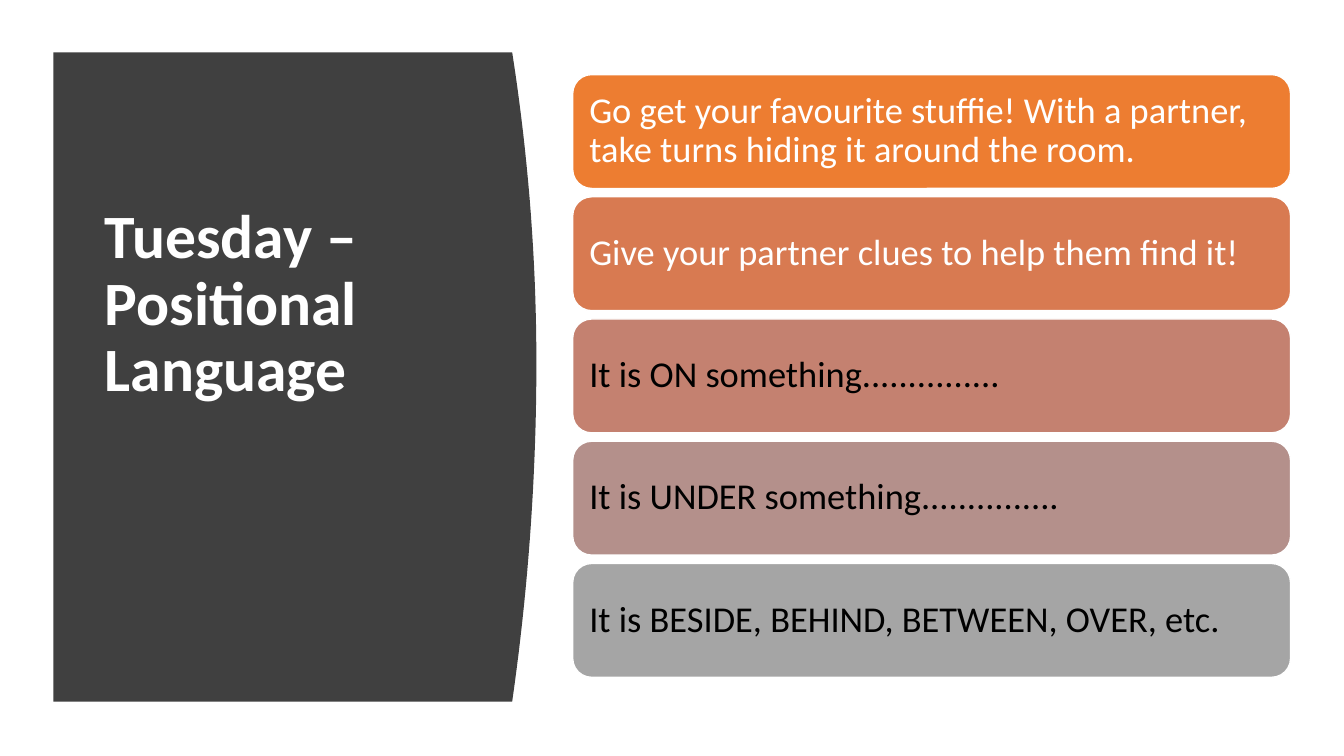
import pptx
import pptx.util
import pptx.dml.color
import pptx.enum.shapes
import pptx.enum.text

Inches = pptx.util.Inches
RGBColor = pptx.dml.color.RGBColor

WHITE = RGBColor(0xFF, 0xFF, 0xFF)
BLACK = RGBColor(0x00, 0x00, 0x00)
CHARCOAL = RGBColor(0x40, 0x40, 0x40)
ORANGE = RGBColor(0xED, 0x7D, 0x31)
TERRACOTTA = RGBColor(0xD8, 0x7A, 0x51)
ROSE = RGBColor(0xC4, 0x81, 0x70)
MAUVE = RGBColor(0xB4, 0x90, 0x8B)
GRAY = RGBColor(0xA5, 0xA5, 0xA5)

CARDS = [
    ("Go get your favourite stuffie! With a partner, take turns hiding it around the room.",
     ORANGE, WHITE),
    ("Give your partner clues to help them find it!", TERRACOTTA, WHITE),
    ("It is ON something...............", ROSE, BLACK),
    ("It is UNDER something...............", MAUVE, BLACK),
    ("It is BESIDE, BEHIND, BETWEEN, OVER, etc.", GRAY, BLACK),
]


class SlideBuilder:
    """Holds the text style and the slide being built."""

    font_name = "Calibri"
    title_size = 44
    card_size = 26
    line_spacing = 0.9

    def __init__(self, slide):
        self.slide = slide

    def set_text(self, shape, text, size, color, bold=False):
        frame = shape.text_frame
        frame.text = text
        frame.word_wrap = True
        frame.auto_size = pptx.enum.text.MSO_AUTO_SIZE.NONE
        frame.vertical_anchor = pptx.enum.text.MSO_ANCHOR.MIDDLE
        paragraph = frame.paragraphs[0]
        paragraph.alignment = pptx.enum.text.PP_ALIGN.LEFT
        paragraph.line_spacing = self.line_spacing
        font = paragraph.runs[0].font
        font.name = self.font_name
        font.size = pptx.util.Pt(size)
        font.bold = bold
        font.color.rgb = color

    def title(self, text, left, top, width, height):
        title = self.slide.shapes.title
        title.left, title.top = Inches(left), Inches(top)
        title.width, title.height = Inches(width), Inches(height)
        self.set_text(title, text, self.title_size, WHITE, bold=True)

    def curved_panel(self, left, top, bottom, corner, bulge, widest_at, steps=40):
        """Draws a panel whose right edge is an arc, placed behind the title."""
        edge = []
        for step in range(steps + 1):
            y = top + (bottom - top) * step / steps
            reach = widest_at - top if y < widest_at else bottom - widest_at
            x = corner + bulge * (1 - ((y - widest_at) / reach) ** 2)
            edge.append((Inches(x), Inches(y)))
        builder = self.slide.shapes.build_freeform(Inches(left), Inches(top))
        builder.add_line_segments(edge + [(Inches(left), Inches(bottom))], close=True)
        panel = builder.convert_to_shape()
        panel.shadow.inherit = False
        panel.fill.solid()
        panel.fill.fore_color.rgb = CHARCOAL
        panel.line.fill.background()
        self.slide.shapes.title.element.addprevious(panel.element)

    def card(self, text, fill, color, left, top, width, height):
        card = self.slide.shapes.add_shape(
            pptx.enum.shapes.MSO_SHAPE.ROUNDED_RECTANGLE,
            Inches(left), Inches(top), Inches(width), Inches(height))
        card.shadow.inherit = False
        card.fill.solid()
        card.fill.fore_color.rgb = fill
        card.line.color.rgb = WHITE
        card.line.width = pptx.util.Pt(1)
        frame = card.text_frame
        frame.margin_left = frame.margin_right = Inches(0.11)
        frame.margin_top = frame.margin_bottom = Inches(0.11)
        self.set_text(card, text, self.card_size, color)


def main():
    presentation = pptx.Presentation()
    presentation.slide_width = Inches(13.33)
    presentation.slide_height = Inches(7.5)
    title_only = presentation.slide_layouts[5]
    builder = SlideBuilder(presentation.slides.add_slide(title_only))

    # Title on the dark panel
    builder.curved_panel(left=0.53, top=0.52, bottom=6.96,
                         corner=5.08, bulge=0.24, widest_at=3.6)
    builder.title("Tuesday – Positional Language", 0.94, 1.11, 3.74, 3.84)

    # Evenly spaced activity cards
    first_top, last_top = 0.74, 5.59
    pitch = (last_top - first_top) / (len(CARDS) - 1)
    for index, (text, fill, color) in enumerate(CARDS):
        builder.card(text, fill, color, 5.68, first_top + index * pitch, 7.12, 1.13)

    presentation.save("out.pptx")


if __name__ == "__main__":
    main()
